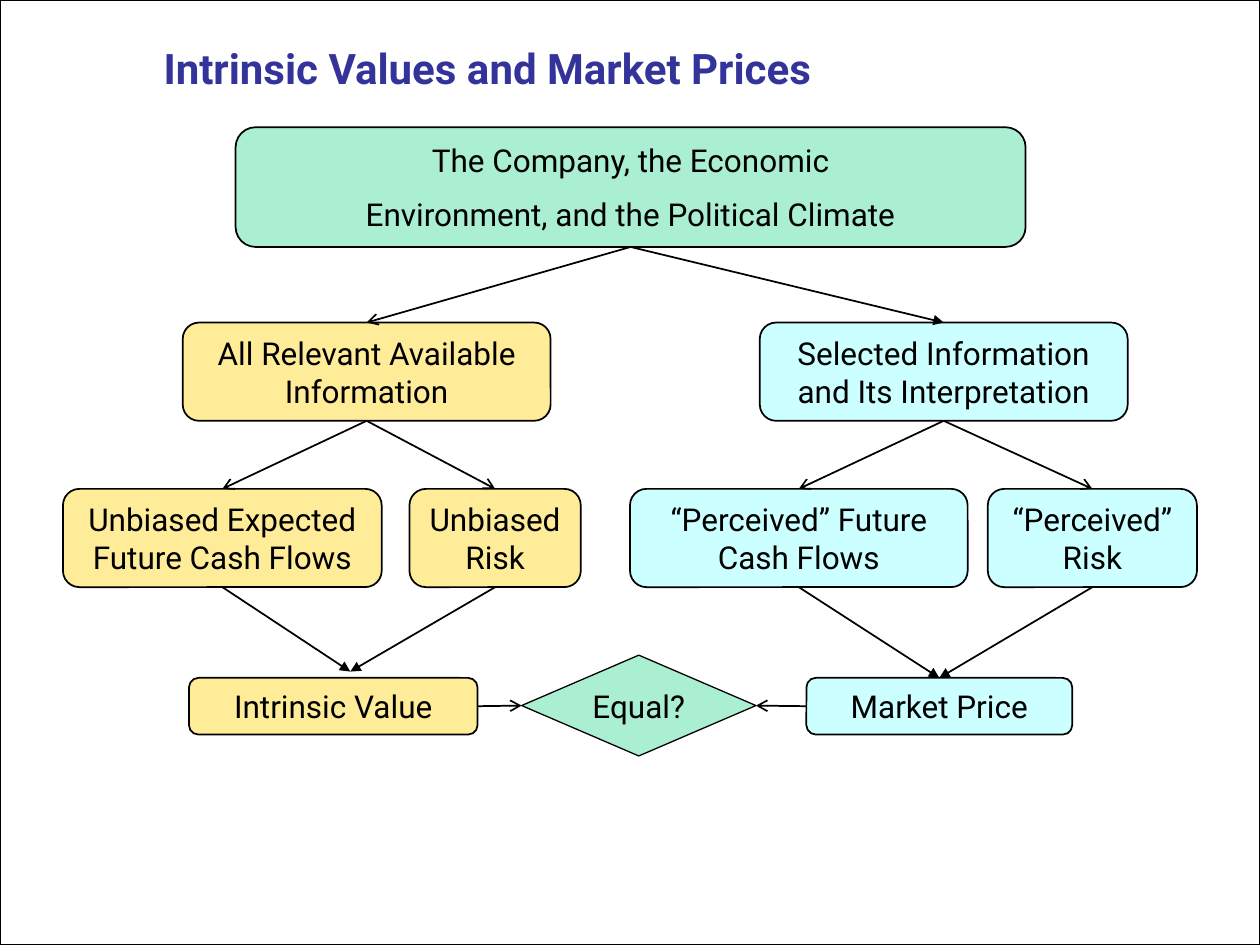
from pptx import Presentation
from pptx import util as u
from pptx.dml.color import RGBColor
from pptx.enum import shapes, text
from pptx.oxml.ns import qn
from lxml import etree

GREEN, YELLOW, CYAN = "AAEFD1", "FFEC99", "CCFFFF"
TOP, LEFT, BOTTOM, RIGHT = range(4)


def color(value):
    return RGBColor.from_string(value)


class FlowSlide:
    """Holds the style and the slide, and draws each kind of element."""

    font = "Roboto"
    ink = "000000"

    def __init__(self, slide):
        self.slide = slide

    def label(self, shape, lines, size=18, ink=ink, bold=False, align=text.PP_ALIGN.CENTER):
        frame = shape.text_frame
        frame.word_wrap = True
        frame.text = "\n".join(lines)
        for index, paragraph in enumerate(frame.paragraphs):
            paragraph.alignment = align
            if index:
                paragraph.space_before = u.Pt(size / 2)
            for run in paragraph.runs:
                run.font.name = self.font
                run.font.size = u.Pt(size)
                run.font.bold = bold
                run.font.color.rgb = color(ink)

    def title(self, line, left, top, width, height):
        shape = self.slide.shapes.add_textbox(*map(u.Inches, (left, top, width, height)))
        self.label(shape, [line], 24, "333399", True, text.PP_ALIGN.LEFT)

    def block(self, kind, fill, left, top, width, height, line_width=1):
        shape = self.slide.shapes.add_shape(kind, *map(u.Inches, (left, top, width, height)))
        shape.shadow.inherit = False
        shape.fill.solid()
        shape.fill.fore_color.rgb = color(fill)
        shape.line.color.rgb = color(self.ink)
        shape.line.width = u.Pt(line_width)
        return shape

    def box(self, fill, left, top, width, height, *lines):
        shape = self.block(shapes.MSO_SHAPE.ROUNDED_RECTANGLE, fill, left, top, width, height)
        shape.text_frame.vertical_anchor = text.MSO_ANCHOR.MIDDLE
        self.label(shape, lines)
        return shape

    def decision(self, fill, left, top, width, height, line):
        kind = shapes.MSO_SHAPE.FLOWCHART_DECISION
        shape = self.block(kind, fill, left, top, width, height, 0.75)
        frame = shape.text_frame
        frame.margin_left = frame.margin_right = 0
        frame.vertical_anchor = text.MSO_ANCHOR.MIDDLE
        self.label(shape, [line])
        frame.word_wrap = False
        return shape

    def arrow(self, start, end, head="arrow", sites=(BOTTOM, TOP), landing=None):
        connector = self.slide.shapes.add_connector(shapes.MSO_CONNECTOR.STRAIGHT, 0, 0, 0, 0)
        connector.begin_connect(start, sites[0])
        if landing:
            connector.end_x, connector.end_y = map(u.Inches, landing)
        else:
            connector.end_connect(end, sites[1])
        connector.line.color.rgb = color(self.ink)
        connector.line.width = u.Pt(1)
        properties = connector._element.spPr
        etree.SubElement(properties.find(qn("a:ln")), qn("a:tailEnd"), type=head)
        etree.SubElement(properties, qn("a:effectLst"))


def main():
    presentation = Presentation()
    presentation.slide_width, presentation.slide_height = u.Inches(10), u.Inches(7.5)
    flow = FlowSlide(presentation.slides.add_slide(presentation.slide_layouts[6]))

    flow.block(shapes.MSO_SHAPE.RECTANGLE, "FFFFFF", 0, 0, 10, 7.5)
    flow.title("Intrinsic Values and Market Prices", 1.2, 0.29, 7.74, 0.5)

    climate = flow.box(GREEN, 1.87, 1.01, 6.27, 0.95, "The Company, the Economic",
                       "Environment, and the Political Climate")
    available = flow.box(YELLOW, 1.45, 2.56, 2.92, 0.78, "All Relevant Available Information")
    selected = flow.box(CYAN, 6.03, 2.56, 2.92, 0.78, "Selected Information and Its Interpretation")
    unbiased_flows = flow.box(YELLOW, 0.5, 3.88, 2.53, 0.78, "Unbiased Expected Future Cash Flows")
    unbiased_risk = flow.box(YELLOW, 3.25, 3.88, 1.36, 0.78, "Unbiased Risk")
    perceived_flows = flow.box(CYAN, 5, 3.88, 2.68, 0.78, "“Perceived” Future Cash Flows")
    perceived_risk = flow.box(CYAN, 7.84, 3.88, 1.66, 0.78, "“Perceived” Risk")
    value = flow.box(YELLOW, 1.5, 5.38, 2.29, 0.45, "Intrinsic Value")
    price = flow.box(CYAN, 6.4, 5.38, 2.11, 0.45, "Market Price")
    equal = flow.decision(GREEN, 4.14, 5.2, 1.86, 0.8, "Equal?")

    flow.arrow(climate, available)
    flow.arrow(climate, selected, "triangle")
    branches = (
        (available, (unbiased_flows, unbiased_risk), value, (2.78, 5.33)),
        (selected, (perceived_flows, perceived_risk), price, None),
    )
    for information, estimates, result, landing in branches:
        for estimate in estimates:
            flow.arrow(information, estimate)
            flow.arrow(estimate, result, "triangle", landing=landing)
    flow.arrow(value, equal, sites=(RIGHT, LEFT))
    flow.arrow(price, equal, sites=(LEFT, RIGHT))

    presentation.save("out.pptx")


if __name__ == "__main__":
    main()
